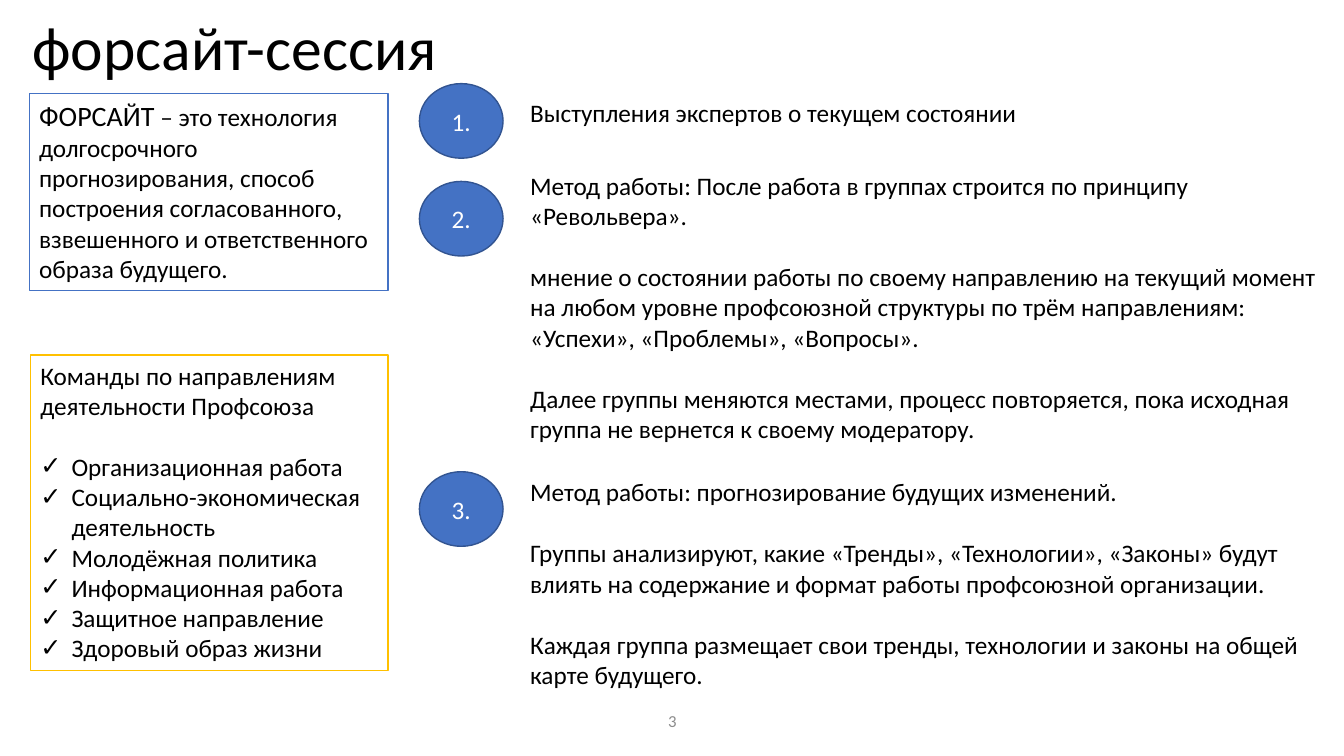
import pptx
import pptx.dml.color
import pptx.enum.shapes
import pptx.enum.text
import pptx.oxml.ns
import pptx.util
from lxml import etree

Inches = pptx.util.Inches
Pt = pptx.util.Pt
RGBColor = pptx.dml.color.RGBColor
Align = pptx.enum.text.PP_ALIGN
Anchor = pptx.enum.text.MSO_ANCHOR
Shape = pptx.enum.shapes.MSO_SHAPE

BLACK = RGBColor(0x00, 0x00, 0x00)
WHITE = RGBColor(0xFF, 0xFF, 0xFF)
GRAY = RGBColor(0x8C, 0x8C, 0x8C)
BLUE = RGBColor(0x44, 0x72, 0xC4)
NAVY = RGBColor(0x32, 0x54, 0x91)
GOLD = RGBColor(0xFF, 0xC0, 0x00)

FONT = "Calibri"
LINE = 22  # one blank line of 18 pt text, in points
INDENT = 0.31

TEAMS = [
    "Организационная работа",
    "Социально-экономическая деятельность",
    "Молодёжная политика",
    "Информационная работа",
    "Защитное направление",
    "Здоровый образ жизни",
]
# Each step: top of its circle, box of its text, paragraphs
STEPS = [
    (0.83, (5.16, 0.92, 5.08, 0.4), ["Выступления экспертов о текущем состоянии"]),
    (1.8, (5.16, 1.64, 8.18, 2.83), [
        "Метод работы: После работа в группах строится по принципу «Револьвера».",
        "мнение о состоянии работы по своему направлению на текущий момент "
        "на любом уровне профсоюзной структуры по трём направлениям: "
        "«Успехи», «Проблемы», «Вопросы».",
        "Далее группы меняются местами, процесс повторяется, "
        "пока исходная группа не вернется к своему модератору.",
    ]),
    (4.68, (5.16, 4.68, 8.08, 2.22), [
        "Метод работы: прогнозирование будущих изменений.",
        "Группы анализируют, какие «Тренды», «Технологии», «Законы» будут "
        "влиять на содержание и формат работы профсоюзной организации.",
        "Каждая группа размещает свои тренды, технологии и законы "
        "на общей карте будущего.",
    ]),
]


def place(shape, box):
    shape.left, shape.top, shape.width, shape.height = map(Inches, box)


def style(para, size=18, color=BLACK, align=Align.LEFT, gap=0):
    para.alignment = align
    para.space_before = Pt(gap)
    para.font.name = FONT
    para.font.size = Pt(size)
    para.font.color.rgb = color


def mark(para, sign=None):
    """Give the paragraph a hanging bullet, or none without a sign."""
    props = para._p.get_or_add_pPr()
    indent = Inches(INDENT) if sign else 0
    props.set("marL", str(indent))
    props.set("indent", str(-indent))
    tag = "a:buChar" if sign else "a:buNone"
    bullet = etree.SubElement(props, pptx.oxml.ns.qn(tag))
    if sign:
        bullet.set("char", sign)


def paint(shape, fill, line):
    shape.fill.solid()
    shape.fill.fore_color.rgb = fill
    shape.line.color.rgb = line
    shape.line.width = Pt(1)


def add_form(slide, kind, box, fill, line):
    shape = slide.shapes.add_shape(kind, *map(Inches, box))
    shape.shadow.inherit = False
    paint(shape, fill, line)
    return shape


def add_text(slide, box, lines, **look):
    """Add a text box whose paragraphs stand one blank line apart."""
    frame = slide.shapes.add_textbox(*map(Inches, box)).text_frame
    frame.word_wrap = True
    for i, line in enumerate(lines):
        para = frame.paragraphs[0] if i == 0 else frame.add_paragraph()
        para.text = line
        style(para, gap=LINE if i else 0, **look)
    return frame


def add_title(slide, box):
    title = slide.shapes.title
    place(title, box)
    frame = title.text_frame
    frame.auto_size = pptx.enum.text.MSO_AUTO_SIZE.NONE
    frame.vertical_anchor = Anchor.MIDDLE
    para = frame.paragraphs[0]
    para.text = "форсайт-сессия"
    para.line_spacing = 0.9
    style(para, 44)


def add_intro(slide, box):
    shape = add_form(slide, Shape.RECTANGLE, box, WHITE, BLUE)
    shape.text_frame.vertical_anchor = Anchor.TOP
    para = shape.text_frame.paragraphs[0]
    style(para)
    parts = [
        ("ФОРСАЙТ", 20),
        (" – это технология долгосрочного прогнозирования, способ построения "
         "согласованного, взвешенного и ответственного образа будущего.", 18),
    ]
    for text, size in parts:
        run = para.add_run()
        run.text = text
        run.font.size = Pt(size)


def add_teams(slide, box):
    body = slide.placeholders[1]
    place(body, box)
    paint(body, WHITE, GOLD)
    frame = body.text_frame
    frame.auto_size = pptx.enum.text.MSO_AUTO_SIZE.NONE
    head = frame.paragraphs[0]
    head.text = "Команды по направлениям деятельности Профсоюза"
    mark(head)
    style(head)
    for i, team in enumerate(TEAMS):
        para = frame.add_paragraph()
        para.text = team
        mark(para, "✓")
        style(para, gap=0 if i else LINE)


def add_step(slide, number, top, box, lines):
    badge = add_form(slide, Shape.OVAL, (box[0] - 1, top, 0.83, 0.74), BLUE, NAVY)
    badge.text_frame.vertical_anchor = Anchor.MIDDLE
    para = badge.text_frame.paragraphs[0]
    para.text = f"{number}."
    style(para, color=WHITE, align=Align.CENTER)
    add_text(slide, box, lines)


def add_page(slide, box):
    frame = add_text(slide, box, ["3"], size=12, color=GRAY, align=Align.CENTER)
    frame.vertical_anchor = Anchor.MIDDLE


def main():
    deck = pptx.Presentation()
    deck.slide_width = Inches(13.33)
    deck.slide_height = Inches(7.5)
    slide = deck.slides.add_slide(deck.slide_layouts[1])
    add_title(slide, (0.22, -0.22, 11.5, 1.45))
    add_intro(slide, (0.29, 0.93, 3.56, 1.95))
    add_teams(slide, (0.3, 3.52, 3.55, 3.13))
    for number, step in enumerate(STEPS, 1):
        add_step(slide, number, *step)
    add_page(slide, (4.42, 6.95, 4.5, 0.4))
    deck.save("out.pptx")


if __name__ == "__main__":
    main()
